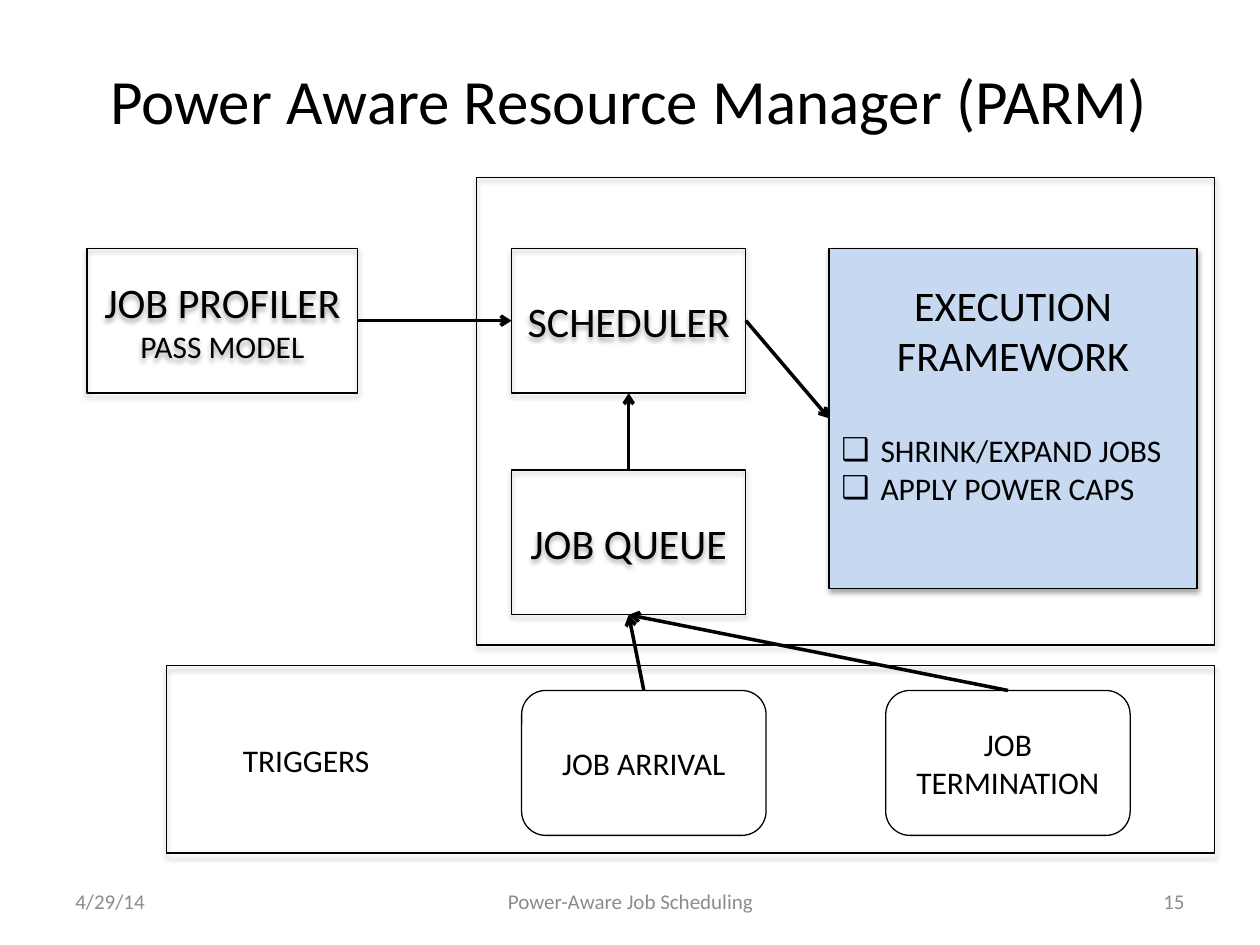
from lxml import etree
from pptx import Presentation
from pptx.dml.color import RGBColor
from pptx.enum.shapes import MSO_CONNECTOR, MSO_SHAPE
from pptx.enum.text import MSO_ANCHOR, PP_ALIGN
from pptx.oxml.ns import qn
from pptx.util import Inches, Pt

RECT, ROUNDED = MSO_SHAPE.RECTANGLE, MSO_SHAPE.ROUNDED_RECTANGLE
STRAIGHT = MSO_CONNECTOR.STRAIGHT
LEFT, CENTER, RIGHT = PP_ALIGN.LEFT, PP_ALIGN.CENTER, PP_ALIGN.RIGHT
MIDDLE = MSO_ANCHOR.MIDDLE
TOP_SIDE, LEFT_SIDE, BOTTOM_SIDE, RIGHT_SIDE = range(4)

FONT = "Calibri"
COLORS = {"ink": "000000", "footer": "8C8C8C", "execution": "C6D9F1"}
COLUMNS, ROWS = 100, 75
CELL = Inches(10) // COLUMNS
BOX_ROWS = 11.5  # height shared by all small boxes


def rgb(name):
    return RGBColor.from_string(COLORS[name])


def grid(*cells):
    return [round(cell * CELL) for cell in cells]


def inside(region, left, top, width, height):
    """Shift a box given relative to the region into slide cells."""
    return region[0] + left, region[1] + top, width, height


def add_run(paragraph, text, size, color="ink"):
    run = paragraph.add_run()
    run.text = text
    run.font.name, run.font.size = FONT, Pt(size)
    run.font.color.rgb = rgb(color)


def write_lines(frame, lines, align=CENTER, color="ink"):
    """Write (text, size) pairs, one paragraph each."""
    frame.word_wrap = True
    frame.vertical_anchor = MIDDLE
    for number, (text, size) in enumerate(lines):
        paragraph = frame.add_paragraph() if number else frame.paragraphs[0]
        paragraph.alignment = align
        add_run(paragraph, text, size, color)


def add_label(slide, box, text, size, align=CENTER, color="ink"):
    label = slide.shapes.add_textbox(*grid(*box))
    write_lines(label.text_frame, [(text, size)], align, color)


def add_shadow(shape):
    effects = shape._element.spPr.find(qn("a:effectLst"))
    shadow = etree.SubElement(effects, qn("a:outerShdw"), blurRad=str(Pt(3.1)),
                              dist=str(Pt(1.8)), dir="5400000", rotWithShape="0")
    shade = etree.SubElement(shadow, qn("a:srgbClr"), val=COLORS["ink"])
    etree.SubElement(shade, qn("a:alpha"), val="35000")


def add_box(slide, box, lines=(), kind=RECT, fill=None, shadow=True):
    shape = slide.shapes.add_shape(kind, *grid(*box))
    shape.shadow.inherit = False
    if shadow:
        add_shadow(shape)
    if fill:
        shape.fill.solid()
        shape.fill.fore_color.rgb = rgb(fill)
    else:
        shape.fill.background()
    shape.line.color.rgb = rgb("ink")
    shape.line.width = Pt(0.75)
    write_lines(shape.text_frame, lines)
    return shape


def add_arrow(slide, source, source_side, target, target_side):
    arrow = slide.shapes.add_connector(STRAIGHT, 0, 0, 0, 0)
    arrow.begin_connect(source, source_side)
    arrow.end_connect(target, target_side)
    arrow.line.color.rgb = rgb("ink")
    arrow.line.width = Pt(2)
    etree.SubElement(arrow.line._get_or_add_ln(), qn("a:tailEnd"), type="arrow")
    etree.SubElement(arrow._element.spPr, qn("a:effectLst"))


def add_check_item(frame, text, gap_before=0):
    item = frame.add_paragraph()
    item.alignment = LEFT
    properties = item._p.get_or_add_pPr()
    properties.set("marL", str(Inches(0.31)))
    properties.set("indent", str(-Inches(0.31)))
    etree.SubElement(properties, qn("a:buFont"), typeface=FONT)
    etree.SubElement(properties, qn("a:buChar"), char="❑")
    item.space_before = Pt(gap_before)
    add_run(item, text, 18)


def add_execution_framework(slide, box):
    execution = add_box(slide, box, fill="execution")
    frame = execution.text_frame
    frame.margin_bottom = Inches(0.45)
    heading = frame.paragraphs[0]
    heading.alignment = CENTER
    add_run(heading, "EXECUTION", 24)
    heading.add_line_break()
    add_run(heading, "FRAMEWORK", 24)
    add_check_item(frame, "SHRINK/EXPAND JOBS", gap_before=29)
    add_check_item(frame, "APPLY POWER CAPS")
    return execution


def add_manager(slide, region):
    """Draw the resource manager; return its scheduler and job queue."""
    add_box(slide, region)
    scheduler, queue = (
        add_box(slide, inside(region, 2.8, top, 18.6, BOX_ROWS), [(text, 24)])
        for text, top in (("SCHEDULER", 5.6), ("JOB QUEUE", 23.2)))
    execution = add_execution_framework(slide, inside(region, 28, 5.6, 29.2, 27))
    add_arrow(slide, scheduler, RIGHT_SIDE, execution, LEFT_SIDE)
    add_arrow(slide, queue, TOP_SIDE, scheduler, BOTTOM_SIDE)
    return scheduler, queue


def add_profiler(slide, box, scheduler):
    profiler = add_box(slide, box, [("JOB PROFILER", 24), ("PASS MODEL", 18)])
    add_arrow(slide, profiler, RIGHT_SIDE, scheduler, LEFT_SIDE)


def add_triggers(slide, region, queue):
    add_box(slide, region)
    add_label(slide, inside(region, 1.3, 5.5, 19.6, 4), "TRIGGERS", 18)
    for text, left in (("JOB ARRIVAL", 28.2), ("JOB TERMINATION", 57.1)):
        trigger = add_box(slide, inside(region, left, 2, 19.4, BOX_ROWS),
                          [(text, 18)], ROUNDED, shadow=False)
        add_arrow(slide, trigger, TOP_SIDE, queue, BOTTOM_SIDE)


def add_title(slide, box):
    title = slide.shapes.title
    title.left, title.top, title.width, title.height = grid(*box)
    write_lines(title.text_frame, [("Power Aware Resource Manager (PARM)", 36)])


def add_footer(slide, region):
    for text, left, width, align in (
            ("4/29/14", 0, 23.3, LEFT),
            ("Power-Aware Job Scheduling", 29.2, 31.7, CENTER),
            ("15", 66.7, 23.3, RIGHT)):
        add_label(slide, inside(region, left, 0, width, region[3]),
                  text, 12, align, "footer")


def main():
    deck = Presentation()
    deck.slide_width, deck.slide_height = grid(COLUMNS, ROWS)
    slide = deck.slides.add_slide(deck.slide_layouts[5])
    add_title(slide, (4.9, 1.6, 90, 12.5))
    scheduler, queue = add_manager(slide, (37.8, 14.1, 58.6, 37.1))
    add_profiler(slide, (6.9, 19.7, 21.5, BOX_ROWS), scheduler)
    add_triggers(slide, (13.2, 52.8, 83.2, 14.9), queue)
    add_footer(slide, (5, 69.5, 90, 4))
    deck.save("out.pptx")


if __name__ == "__main__":
    main()
